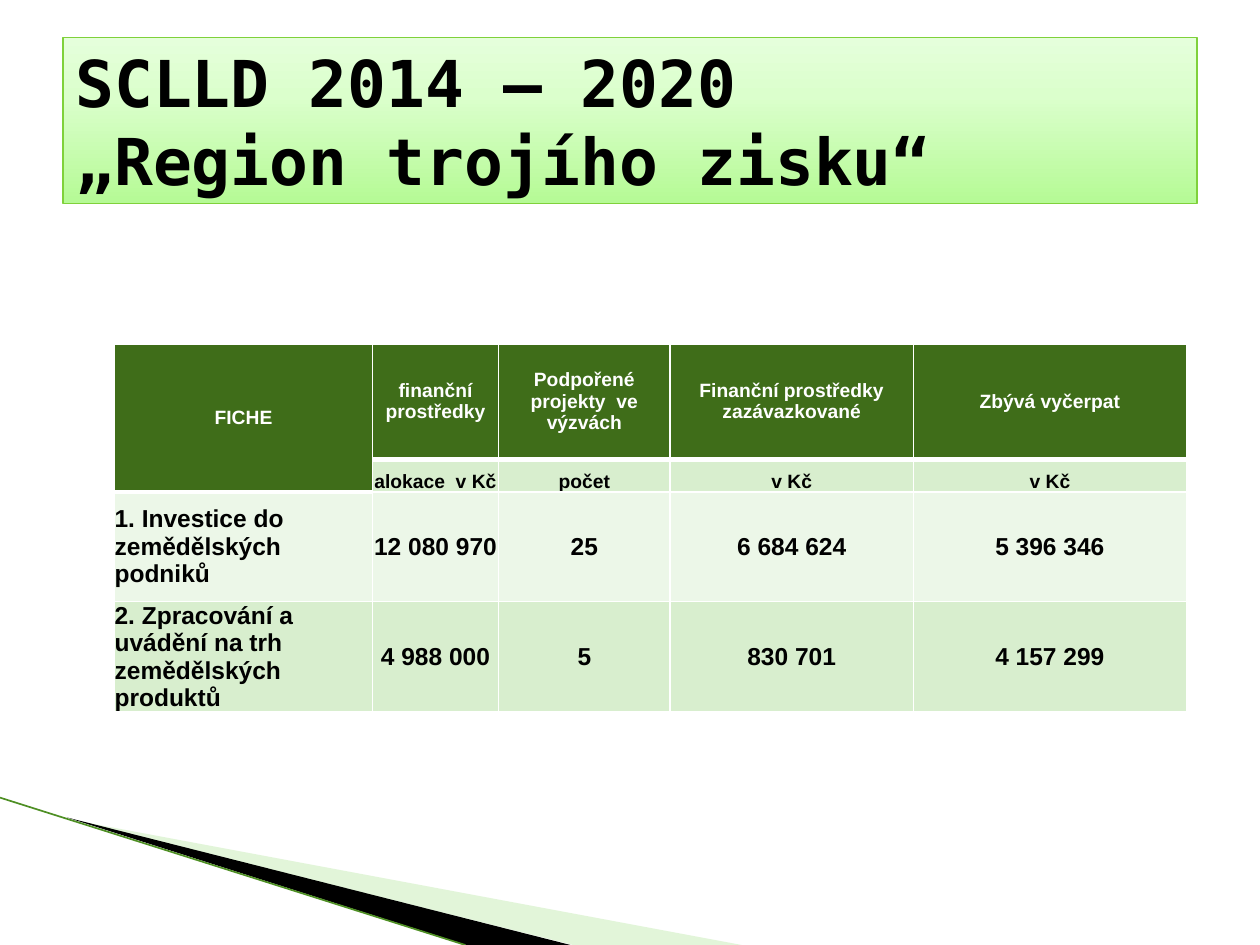
from copy import deepcopy

from lxml import etree
from pptx import Presentation
from pptx import util as u
from pptx.dml.color import RGBColor
from pptx.enum import shapes, text
from pptx.oxml import ns

COLOURS = {
    "black": "000000",
    "white": "FFFFFF",
    "wedge": "B8E7A1",
    "edge": "4E8F24",
    "title_line": "7FD13B",
    "header": "3F6D19",
    "band_dark": "D8EECE",
    "band_light": "ECF7E8",
}
TITLE_STOPS = [(0, "B5FA95"), (0.65, "DBFFCC"), (1, "E5FFDB")]
COLUMN_WIDTHS = [5.2, 2.54, 3.46, 4.9, 5.51]
ROW_HEIGHTS = [2.33, 0.66, 2.21, 2.21]
ROW_FILLS = ["header", "band_dark", "band_light", "band_dark"]
ROWS = [
    ["FICHE", "finanční prostředky", "Podpořené projekty  ve výzvách",
     "Finanční prostředky zazávazkované", "Zbývá vyčerpat"],
    ["", "alokace  v Kč", "počet", "v Kč", "v Kč"],
    ["1. Investice do zemědělských podniků", "12 080 970", "25",
     "6 684 624", "5 396 346"],
    ["2. Zpracování a uvádění na trh zemědělských produktů", "4 988 000", "5",
     "830 701", "4 157 299"],
]


def colour(name):
    return RGBColor.from_string(COLOURS[name])


def write_text(frame, content, size, font="Arial", fill="black",
               align=text.PP_ALIGN.LEFT):
    paragraph = frame.paragraphs[0]
    paragraph.text = content
    paragraph.alignment = align
    for run in paragraph.runs:
        run.font.name = font
        run.font.size = u.Pt(size)
        run.font.bold = True
        run.font.color.rgb = colour(fill)


def add_wedge(slide, points, fill, opacity=100):
    corners = [(u.Cm(x), u.Cm(y)) for x, y in points]
    builder = slide.shapes.build_freeform(*corners[0])
    builder.add_line_segments(corners[1:], close=True)
    shape = builder.convert_to_shape()
    shape.shadow.inherit = False
    shape.fill.solid()
    shape.fill.fore_color.rgb = colour(fill)
    shape.line.fill.background()
    if opacity < 100:
        tint = shape._element.spPr.find(".//" + ns.qn("a:srgbClr"))
        etree.SubElement(tint, ns.qn("a:alpha"), val=str(opacity * 1000))


def add_line(slide, start, end, fill, width):
    ends = [u.Cm(value) for value in (*start, *end)]
    connector = slide.shapes.add_connector(shapes.MSO_CONNECTOR.STRAIGHT, *ends)
    connector.line.color.rgb = colour(fill)
    connector.line.width = u.Pt(width)
    etree.SubElement(connector._element.spPr, ns.qn("a:effectLst"))


def add_title(slide, content):
    shape = slide.shapes.add_shape(shapes.MSO_SHAPE.RECTANGLE, u.Cm(1.27),
                                   u.Cm(0.76), u.Cm(22.86), u.Cm(3.35))
    shape.shadow.inherit = False
    shape.line.color.rgb = colour("title_line")
    shape.line.width = u.Pt(0.75)
    shape.fill.gradient()
    shape.fill.gradient_angle = 90
    stop_list = shape._element.spPr.find(".//" + ns.qn("a:gsLst"))
    stop_list.append(deepcopy(stop_list[0]))
    for stop, (position, value) in zip(shape.fill.gradient_stops, TITLE_STOPS):
        stop.position = position
        stop.color.rgb = RGBColor.from_string(value)
    shape.text_frame.word_wrap = True
    shape.text_frame.vertical_anchor = text.MSO_ANCHOR.MIDDLE
    write_text(shape.text_frame, content, 36.9, font="DejaVu Sans Mono")


def set_borders(cell, bottom):
    properties = cell._tc.get_or_add_tcPr()
    widths = {"lnL": 1, "lnR": 1, "lnT": 1, "lnB": bottom}
    for index, (side, width) in enumerate(widths.items()):
        border = etree.Element(ns.qn("a:" + side), w=str(u.Pt(width)))
        fill = etree.SubElement(border, ns.qn("a:solidFill"))
        etree.SubElement(fill, ns.qn("a:srgbClr"), val=COLOURS["white"])
        properties.insert(index, border)


def format_cell(cell, row, column):
    is_header = row == 0 or (row == 1 and column == 0)
    cell.fill.solid()
    cell.fill.fore_color.rgb = colour("header" if is_header else ROW_FILLS[row])
    cell.vertical_anchor = (text.MSO_ANCHOR.BOTTOM if row == 1
                            else text.MSO_ANCHOR.MIDDLE)
    if row > 0 or column < 2:
        cell.margin_left = cell.margin_right = 0
        cell.margin_top = cell.margin_bottom = 0
    set_borders(cell, 3 if is_header else 1)
    if ROWS[row][column]:
        is_label = row > 1 and column == 0
        write_text(cell.text_frame, ROWS[row][column], 11 if row < 2 else 14,
                   fill="white" if is_header else "black",
                   align=text.PP_ALIGN.LEFT if is_label else text.PP_ALIGN.CENTER)


def add_fiche_table(slide):
    frame = slide.shapes.add_table(len(ROWS), len(COLUMN_WIDTHS), u.Cm(2.31),
                                   u.Cm(6.93), u.Cm(sum(COLUMN_WIDTHS)),
                                   u.Cm(sum(ROW_HEIGHTS)))
    table = frame.table
    for column, width in zip(table.columns, COLUMN_WIDTHS):
        column.width = u.Cm(width)
    for row, height in zip(table.rows, ROW_HEIGHTS):
        row.height = u.Cm(height)
    for row in range(len(ROWS)):
        for column in range(len(COLUMN_WIDTHS)):
            format_cell(table.cell(row, column), row, column)
    table.cell(0, 0).merge(table.cell(1, 0))


def main():
    presentation = Presentation()
    presentation.slide_width = u.Cm(25.4)
    presentation.slide_height = u.Cm(19.05)
    slide = presentation.slides.add_slide(presentation.slide_layouts[6])
    add_wedge(slide, [(1.4, 16.52), (14.95, 19.05), (11.55, 19.05)], "wedge", 40)
    add_wedge(slide, [(1.35, 16.48), (11.5, 19.05), (9.4, 19.05)], "black")
    add_line(slide, (0, 16.08), (9.38, 19.05), "edge", 0.95)
    add_title(slide, "SCLLD 2014 – 2020\v„Region trojího zisku“")
    add_fiche_table(slide)
    presentation.save("out.pptx")


if __name__ == "__main__":
    main()
